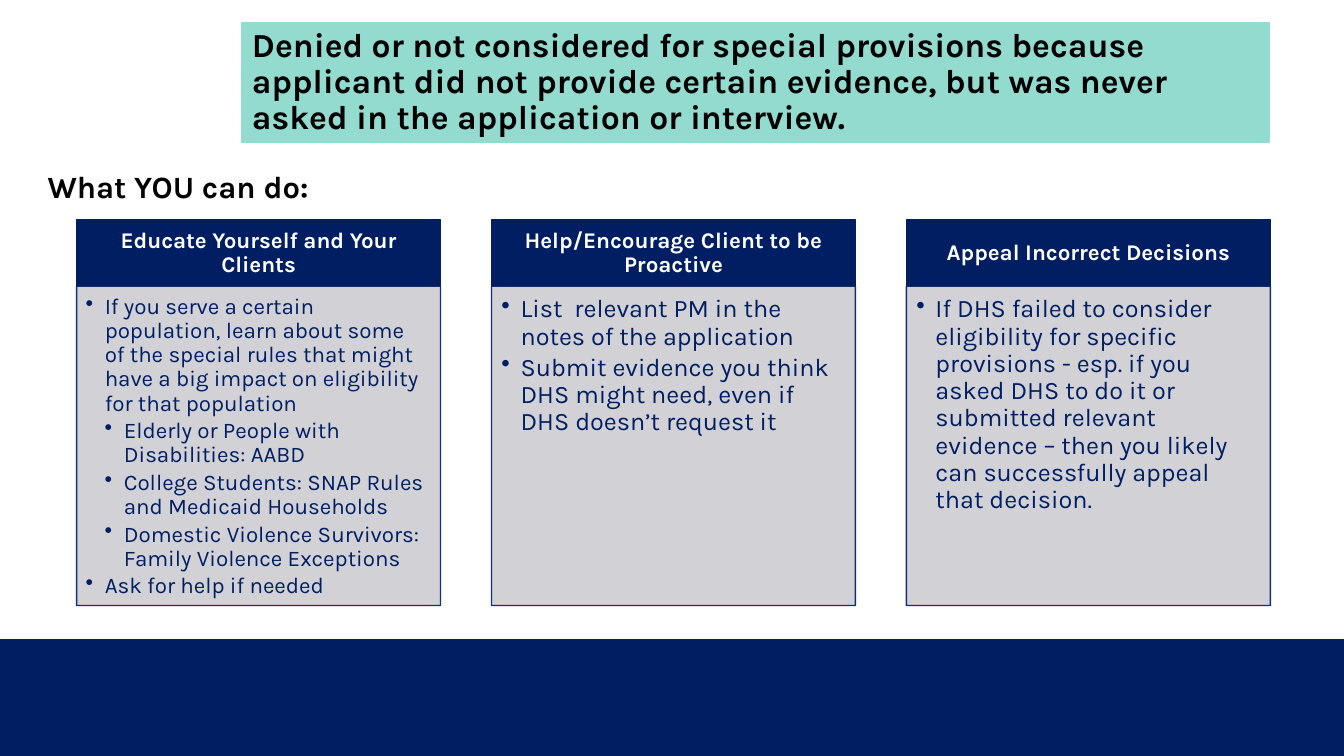
from dataclasses import dataclass

from lxml import etree
from pptx import Presentation, util as u
from pptx.dml.color import RGBColor
from pptx.enum import shapes, text
from pptx.oxml import ns


@dataclass(frozen=True)
class Theme:
    font: str = "Karla"
    navy: str = "001E61"
    mint: str = "93DACF"
    grey: str = "CCCDD2"
    black: str = "000000"
    white: str = "FFFFFF"
    title_size: float = 24
    prompt_size: float = 22.1
    heading_size: float = 16
    line_spacing: float = 0.9
    panel_opacity: int = 90
    indent: float = 0.19


class SlideBuilder:
    """Places elements in hundredths of the slide's width and height."""

    def __init__(self, deck, theme):
        self.deck, self.theme = deck, theme
        self.slide = deck.slides.add_slide(deck.slide_layouts[5])

    def area(self, left, top, width, height):
        across, down = self.deck.slide_width / 100, self.deck.slide_height / 100
        return [round(v) for v in (left * across, top * down, width * across, height * down)]

    def paint(self, shape, fill, line=None, line_width=1, opacity=100):
        shape.fill.solid()
        shape.fill.fore_color.rgb = RGBColor.from_string(fill)
        if line:
            shape.line.color.rgb = RGBColor.from_string(line)
            shape.line.width = u.Pt(line_width)
        else:
            shape.line.fill.background()
        if opacity < 100:
            for color in shape.element.spPr.iter(ns.qn("a:srgbClr")):
                etree.SubElement(color, ns.qn("a:alpha"), val=str(opacity * 1000))

    def frame(self, shape, anchor, insets):
        frame = shape.text_frame
        frame.word_wrap = True
        frame.auto_size = text.MSO_AUTO_SIZE.NONE
        frame.vertical_anchor = anchor
        (frame.margin_left, frame.margin_top,
         frame.margin_right, frame.margin_bottom) = map(u.Inches, insets)
        return frame

    def style(self, paragraph, size, color, bold=False, align=text.PP_ALIGN.LEFT):
        paragraph.alignment = align
        paragraph.line_spacing = self.theme.line_spacing
        paragraph.space_before = u.Pt(0)
        font = paragraph.font
        font.name, font.size, font.bold = self.theme.font, u.Pt(size), bold
        font.color.rgb = RGBColor.from_string(color)

    def bullet(self, paragraph, level):
        paragraph.level = level
        indent = u.Inches(self.theme.indent)
        properties = paragraph._p.get_or_add_pPr()
        properties.set("marL", str(indent * (level + 1)))
        properties.set("indent", str(-indent))
        etree.SubElement(properties, ns.qn("a:buChar"), char="•")

    def rectangle(self, area, fill, **look):
        shape = self.slide.shapes.add_shape(shapes.MSO_SHAPE.RECTANGLE, *self.area(*area))
        shape.shadow.inherit = False
        self.paint(shape, fill, **look)
        return shape

    def title(self, area, words):
        title = self.slide.shapes.title
        title.left, title.top, title.width, title.height = self.area(*area)
        self.paint(title, self.theme.mint, self.theme.mint, 0.75)
        frame = self.frame(title, text.MSO_ANCHOR.MIDDLE, (0.1, 0.05, 0.1, 0.05))
        frame.text = words
        self.style(frame.paragraphs[0], self.theme.title_size, self.theme.black, bold=True)

    def prompt(self, area, words):
        box = self.slide.shapes.add_textbox(*self.area(*area))
        frame = self.frame(box, text.MSO_ANCHOR.BOTTOM, (0.1, 0, 0.1, 0))
        frame.text = words
        self.style(frame.paragraphs[0], self.theme.prompt_size, self.theme.black, bold=True)

    def heading(self, area, words):
        bar = self.rectangle(area, self.theme.navy, line=self.theme.navy)
        frame = self.frame(bar, text.MSO_ANCHOR.MIDDLE, (0.12, 0.07, 0.12, 0.07))
        frame.text = words
        self.style(frame.paragraphs[0], self.theme.heading_size, self.theme.white,
                   bold=True, align=text.PP_ALIGN.CENTER)

    def bullet_panel(self, area, size, points):
        """Draw a panel whose insets and paragraph gaps follow its type size."""
        panel = self.rectangle(area, self.theme.grey, line=self.theme.navy,
                               opacity=self.theme.panel_opacity)
        insets = [size * share / 72 for share in (0.4, 0.4, 0.54, 0.63)]
        frame = self.frame(panel, text.MSO_ANCHOR.TOP, insets)
        for number, (level, words) in enumerate(points):
            paragraph = frame.add_paragraph() if number else frame.paragraphs[0]
            paragraph.text = words
            self.bullet(paragraph, level)
            self.style(paragraph, size, self.theme.navy)
            paragraph.space_after = u.Pt(size * 0.15)


ACTIONS = [
    ("Educate Yourself and Your Clients", 16, [
        (0, "If you serve a certain population, learn about some of the special rules "
            "that might have a big impact on eligibility for that population"),
        (1, "Elderly or People with Disabilities: AABD"),
        (1, "College Students: SNAP Rules and Medicaid Households"),
        (1, "Domestic Violence Survivors: Family Violence Exceptions"),
        (0, "Ask for help if needed"),
    ]),
    ("Help/Encourage Client to be Proactive", 18, [
        (0, "List  relevant PM in the notes of the application"),
        (0, "Submit evidence you think DHS might need, even if DHS doesn’t request it"),
    ]),
    ("Appeal Incorrect Decisions", 18, [
        (0, "If DHS failed to consider eligibility for specific provisions - esp. if you "
            "asked DHS to do it or submitted relevant evidence – then you likely can "
            "successfully appeal that decision."),
    ]),
]
FIRST_COLUMN, COLUMN_STEP, COLUMN_WIDTH = 5.7, 30.87, 27.08
HEADING_TOP, HEADING_HEIGHT, PANEL_HEIGHT = 29.1, 8.75, 42.25


def main():
    deck = Presentation()
    deck.slide_width, deck.slide_height = u.Inches(13.33), u.Inches(7.5)
    theme = Theme()
    page = SlideBuilder(deck, theme)

    page.rectangle((0, 84.53, 100, 15.47), theme.navy)
    page.title((18, 3, 76.45, 15.9),
               "Denied or not considered for special provisions because applicant did not "
               "provide certain evidence, but was never asked in the application or interview.")
    page.prompt((2.8, 17.2, 77.6, 10), "What YOU can do:")
    for column, (heading, size, points) in enumerate(ACTIONS):
        left = FIRST_COLUMN + column * COLUMN_STEP
        page.heading((left, HEADING_TOP, COLUMN_WIDTH, HEADING_HEIGHT), heading)
        page.bullet_panel((left, HEADING_TOP + HEADING_HEIGHT, COLUMN_WIDTH, PANEL_HEIGHT),
                          size, points)

    deck.save("out.pptx")


if __name__ == "__main__":
    main()
